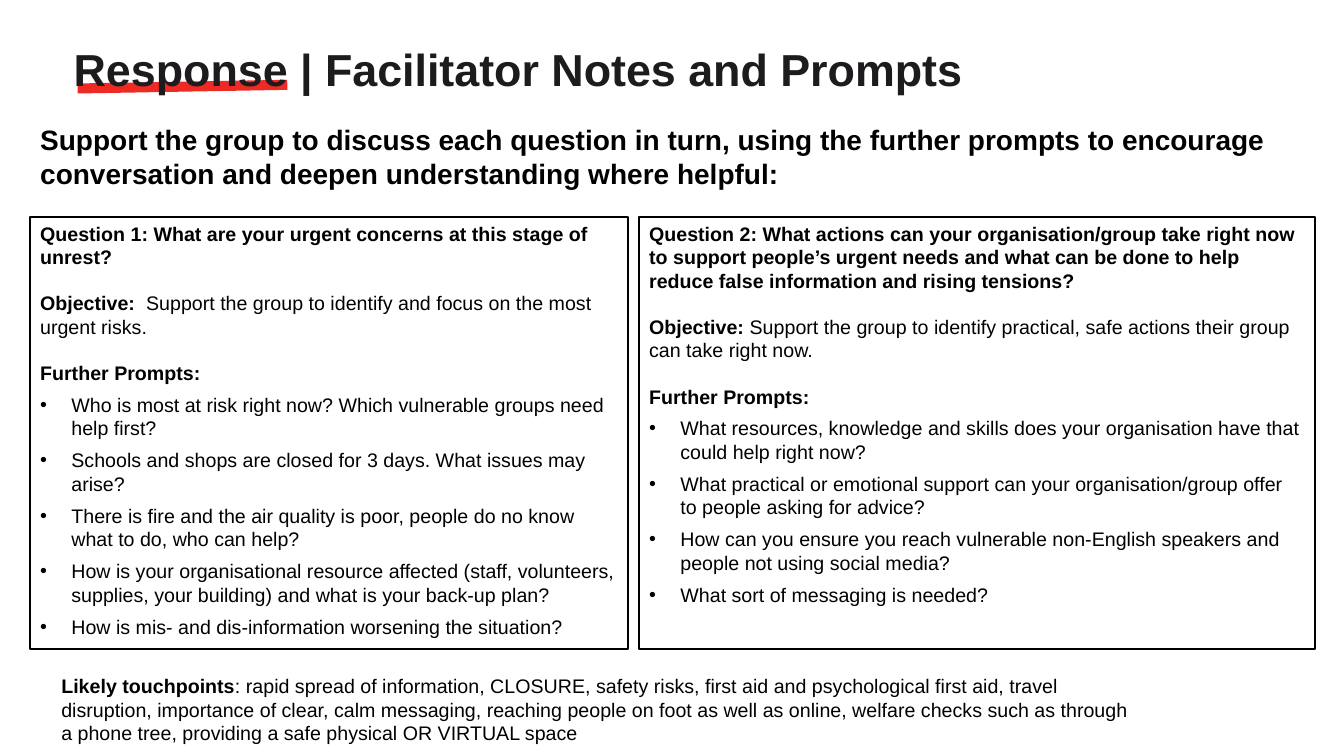
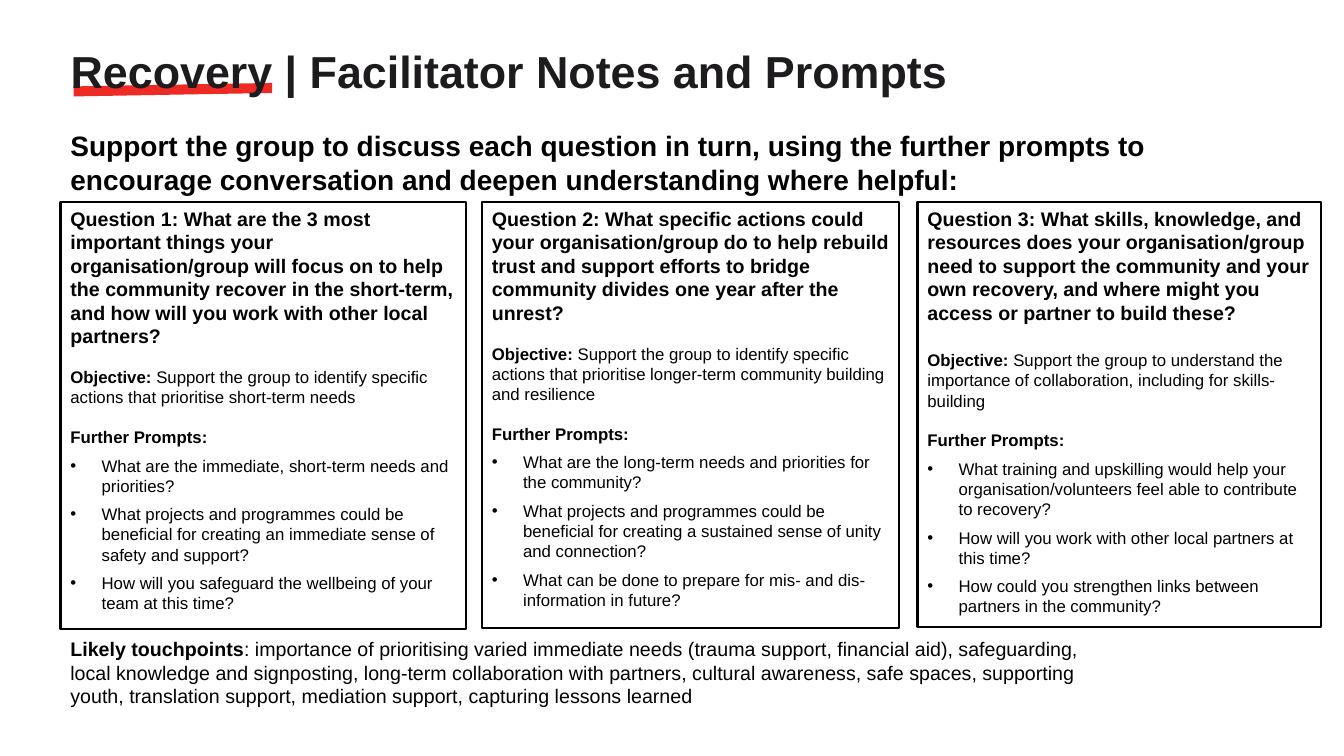
from lxml import etree
from pptx import Presentation
from pptx import util as u
from pptx.dml.color import RGBColor
from pptx.enum import shapes, text
from pptx.oxml.ns import qn

PX = 9144  # EMU in one px, 100 px to the inch
BLACK, TITLE_INK, RED = "000000", "1D1B1D", "EE2A24"
FONT = "Arial"
FRAME = {
    "word_wrap": True,
    "auto_size": text.MSO_AUTO_SIZE.NONE,
    "vertical_anchor": text.MSO_ANCHOR.TOP,
    "margin_left": 10 * PX,
    "margin_right": 10 * PX,
    "margin_top": 5 * PX,
    "margin_bottom": 5 * PX,
}
TITLE_TAIL = " | Facilitator Notes and Prompts"
INTRO = ("Support the group to discuss each question in turn, using the further prompts "
         "to encourage conversation and deepen understanding where helpful:")

# Boxes are (left, top, width, height); a card is (left, width, height, ...)
RESPONSE = {
    "word": "Response",
    "title_at": (63, 36, 1266, 64),
    "bar_at": (77, 81, 208, 10),
    "intro_at": (30, 117, 1272, 77),
    "cards_top": 215,
    "size": 14,
    "cards": [
        {"box": (30, 593, 429),
         "question": "Question 1: What are your urgent concerns at this stage of unrest?",
         "objective": "  Support the group to identify and focus on the most urgent risks.",
         "prompts": [
             "Who is most at risk right now? Which vulnerable groups need help first?",
             "Schools and shops are closed for 3 days. What issues may arise?",
             "There is fire and the air quality is poor, people do no know what to do, who can help?",
             "How is your organisational resource affected (staff, volunteers, supplies, "
             "your building) and what is your back-up plan?",
             "How is mis- and dis-information worsening the situation?"]},
        {"box": (634, 670, 429),
         "question": "Question 2: What actions can your organisation/group take right now to support "
                     "people’s urgent needs and what can be done to help reduce false information "
                     "and rising tensions?",
         "objective": " Support the group to identify practical, safe actions their group "
                      "can take right now.",
         "prompts": [
             "What resources, knowledge and skills does your organisation have that could "
             "help right now?",
             "What practical or emotional support can your organisation/group offer to people "
             "asking for advice?",
             "How can you ensure you reach vulnerable non-English speakers and people not using "
             "social media?",
             "What sort of messaging is needed?"]},
    ],
    "touch_at": (51, 664, 1079, 81),
    "touchpoints": ": rapid spread of information, CLOSURE, safety risks, first aid and psychological "
                   "first aid, travel disruption, importance of clear, calm messaging, reaching people "
                   "on foot as well as online, welfare checks such as through a phone tree, providing "
                   "a safe physical OR VIRTUAL space",
}
RECOVERY = {
    "word": "Recovery",
    "title_at": (60, 38, 1273, 64),
    "bar_at": (73, 84, 197, 10),
    "intro_at": (60, 123, 1110, 77),
    "cards_top": 200,
    "size": 12,
    "cards": [
        {"box": (60, 402, 424),
         "question": "Question 1: What are the 3 most important things your organisation/group will "
                     "focus on to help the community recover in the short-term, and how will you work "
                     "with other local partners?",
         "objective": " Support the group to identify specific actions that prioritise short-term needs",
         "prompts": [
             "What are the immediate, short-term needs and priorities?",
             "What projects and programmes could be beneficial for creating an immediate sense "
             "of safety and support?",
             "How will you safeguard the wellbeing of your team at this time?"]},
        {"box": (478, 414, 423),
         "question": "Question 2: What specific actions could your organisation/group do to help "
                     "rebuild trust and support efforts to bridge community divides one year after "
                     "the unrest?",
         "objective": " Support the group to identify specific actions that prioritise longer-term "
                      "community building and resilience",
         "prompts": [
             "What are the long-term needs and priorities for the community?",
             "What projects and programmes could be beneficial for creating a sustained sense of "
             "unity and connection?",
             "What can be done to prepare for mis- and dis-information in future?"]},
        {"box": (910, 400, 422),
         "gap": 18.4,
         "question": "Question 3: What skills, knowledge, and resources does your organisation/group "
                     "need to support the community and your own recovery, and where might you access "
                     "or partner to build these?",
         "objective": " Support the group to understand the importance of collaboration, including "
                      "for skills-building",
         "prompts": [
             "What training and upskilling would help your organisation/volunteers feel able to "
             "contribute to recovery?",
             "How will you work with other local partners at this time?",
             "How could you strengthen links between partners in the community?"]},
    ],
    "touch_at": (60, 627, 1057, 81),
    "touchpoints": ": importance of prioritising varied immediate needs (trauma support, financial aid), "
                   "safeguarding, local knowledge and signposting, long-term collaboration with partners, "
                   "cultural awareness, safe spaces, supporting youth, translation support, mediation "
                   "support, capturing lessons learned",
}


def rgb(value):
    return RGBColor.from_string(value)


def scaled(box):
    return [v * PX for v in box]


def apply(target, values):
    for name, value in values.items():
        setattr(target, name, value)


def add_bullet(p):
    pPr = p._p.get_or_add_pPr()
    pPr.set("marL", str(31 * PX))
    pPr.set("indent", str(-31 * PX))
    etree.SubElement(pPr, qn("a:buFont")).set("typeface", FONT)
    etree.SubElement(pPr, qn("a:buChar")).set("char", "•")


def write(tf, paragraphs):
    """Fill a frame from dicts: runs of (text, bold), size, and optional spacing."""
    apply(tf, FRAME)
    for i, item in enumerate(paragraphs):
        p = tf.paragraphs[0] if i == 0 else tf.add_paragraph()
        if item.get("bullet"):
            add_bullet(p)
        apply(p, {"alignment": text.PP_ALIGN.LEFT,
                  "space_before": u.Pt(item.get("before", 0)),
                  "space_after": u.Pt(item.get("after", 0))})
        for words, bold in item["runs"]:
            r = p.add_run()
            r.text = words
            apply(r.font, {"name": FONT, "size": u.Pt(item["size"]), "bold": bold})
            r.font.color.rgb = rgb(item.get("color", BLACK))


def add_rect(slide, box, fill=None, line=None):
    sp = slide.shapes.add_shape(shapes.MSO_SHAPE.RECTANGLE, *scaled(box))
    sp.shadow.inherit = False
    if fill:
        sp.fill.solid()
        sp.fill.fore_color.rgb = rgb(fill)
    else:
        sp.fill.background()
    if line:
        sp.line.color.rgb = rgb(line)
        sp.line.width = u.Pt(1.5)
    else:
        sp.line.fill.background()
    return sp


def add_title(slide, word, title_at, bar_at):
    # Red underline sits behind the title
    bar = add_rect(slide, bar_at, fill=RED)
    bar.rotation = -1
    sp = slide.shapes.title
    apply(sp, dict(zip(("left", "top", "width", "height"), scaled(title_at))))
    write(sp.text_frame, [{"runs": [(word + TITLE_TAIL, True)], "size": 32, "color": TITLE_INK}])
    bar._element.addnext(sp._element)


def add_text(slide, box, runs, size):
    sp = slide.shapes.add_textbox(*scaled(box))
    write(sp.text_frame, [{"runs": runs, "size": size}])


def add_card(slide, card, top, size):
    left, width, height = card["box"]
    sp = add_rect(slide, (left, top, width, height), line=BLACK)
    gap = round(size * 1.15, 1)  # one line of text
    paragraphs = [
        {"runs": [(card["question"], True)], "size": 14},
        {"runs": [("Objective:", True), (card["objective"], False)], "size": size,
         "before": card.get("gap", gap)},
        {"runs": [("Further Prompts:", True)], "size": size, "before": gap, "after": 6},
    ]
    paragraphs += [{"runs": [(prompt, False)], "size": size, "after": 6, "bullet": True}
                   for prompt in card["prompts"]]
    write(sp.text_frame, paragraphs)


def add_notes_slide(prs, content):
    slide = prs.slides.add_slide(prs.slide_layouts[5])  # title only
    add_title(slide, content["word"], content["title_at"], content["bar_at"])
    add_text(slide, content["intro_at"], [(INTRO, True)], 20)
    for card in content["cards"]:
        add_card(slide, card, content["cards_top"], content["size"])
    add_text(slide, content["touch_at"],
             [("Likely touchpoints", True), (content["touchpoints"], False)], 14)


def main():
    prs = Presentation()
    apply(prs, {"slide_width": 1333 * PX, "slide_height": 750 * PX})
    for content in (RESPONSE, RECOVERY):
        add_notes_slide(prs, content)
    prs.save("out.pptx")


if __name__ == "__main__":
    main()
